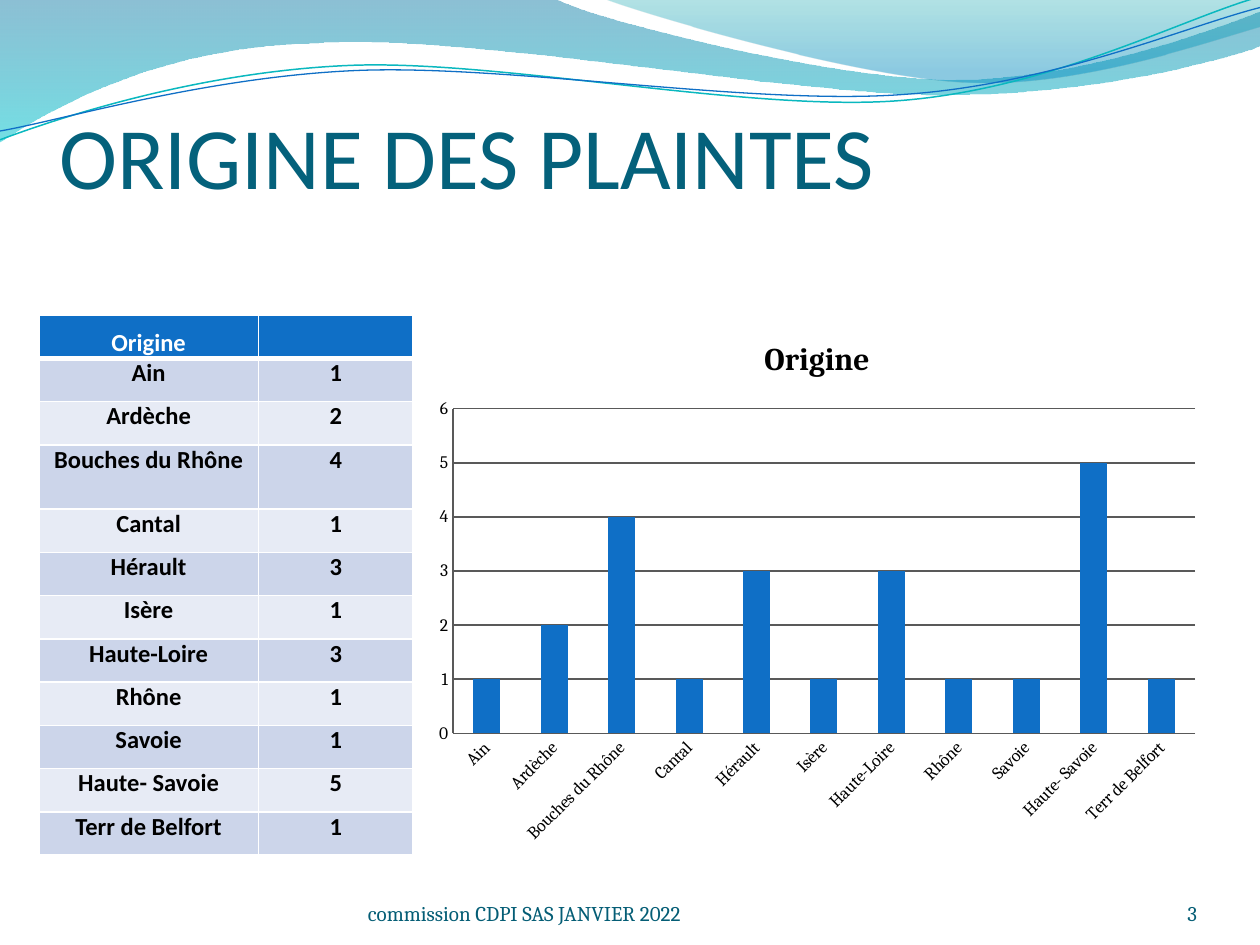
from lxml import etree
from pptx import Presentation
from pptx import util as u
from pptx.chart import data as chart_data
from pptx.dml.color import RGBColor
from pptx.enum import chart as ch, text as tx
from pptx.oxml import parse_xml
from pptx.oxml.ns import nsdecls, qn

# Content
TITLE = "ORIGINE DES PLAINTES"
HEADING = "Origine"
COMPLAINTS = [
    ("Ain", 1), ("Ardèche", 2), ("Bouches du Rhône", 4), ("Cantal", 1),
    ("Hérault", 3), ("Isère", 1), ("Haute-Loire", 3), ("Rhône", 1),
    ("Savoie", 1), ("Haute- Savoie", 5), ("Terr de Belfort", 1),
]
FOOTER, PAGE_NUMBER = "commission CDPI SAS JANVIER 2022", "3"

COLORS = {"title": "04617B", "footer": "045D75", "blue": "0F6FC6", "teal": "0AB8BF",
          "odd": "CCD5EA", "even": "E7EBF5", "white": "FFFFFF", "black": "000000",
          "axis": "595959"}

# Header waves: a two-number step is a line, a six-number step a Bézier curve
BANDS = [
    ([(0, 0), (4.4, -0.01), (4.76, 0.17, 6.64, 0.63, 7.58, 0.63),
      (8.53, 0.63, 9.58, 0.26, 10, 0.09), (10.01, 0.36),
      (9.83, 0.44, 8.7, 0.76, 7.46, 0.75), (6.22, 0.75, 3.82, 0.28, 2.57, 0.34),
      (1.29, 0.36, 0.46, 0.83, -0.01, 1.13), (0, 0)],
     [(0, "0074A1", 45), (100, "00C6CF", 55)]),
    ([(4.79, -0.01), (5.09, 0.11, 6.82, 0.62, 7.69, 0.65),
      (8.56, 0.69, 9.61, 0.32, 10, 0.21), (10, 0), (4.79, -0.01)],
     [(0, "00A1A9", 30), (80, "008BBF", 45)]),
]
STROKES = [
    ([(0, 1.11), (0.48, 0.93, 1.58, 0.57, 2.77, 0.52),
      (3.95, 0.47, 5.93, 0.89, 7.13, 0.8), (8.33, 0.71, 9.38, 0.15, 9.98, -0.02)],
     "teal", 0.85),
    ([(0, 1.04), (0.47, 0.96, 1.64, 0.61, 2.83, 0.56),
      (4.03, 0.51, 5.97, 0.84, 7.17, 0.75), (8.36, 0.67, 9.41, 0.21, 10, 0.06)],
     "blue", 0.75),
]


def rgb(name):
    return RGBColor.from_string(COLORS[name])


def add_wave(page, steps, closed):
    """Build the outline from straight legs, then join each three into a curve."""
    points = [(u.Inches(step[i]), u.Inches(step[i + 1]))
              for step in steps for i in range(0, len(step), 2)]
    builder = page.shapes.build_freeform(*points[0], scale=1.0)
    builder.add_line_segments(points[1:], close=closed)
    wave = builder.convert_to_shape()
    wave.shadow.inherit = False
    legs = iter(list(wave._element.iter(qn("a:lnTo"))))
    for step in steps[1:]:
        first = next(legs)
        if len(step) == 6:
            curve = etree.Element(qn("a:cubicBezTo"))
            first.addprevious(curve)
            for leg in (first, next(legs), next(legs)):
                curve.append(leg[0])
                leg.getparent().remove(leg)
    return wave


def fill_gradient(shape, stops):
    marks = "".join(
        f'<a:gs pos="{pos * 1000}"><a:srgbClr val="{color}">'
        f'<a:alpha val="{alpha * 1000}"/></a:srgbClr></a:gs>' for pos, color, alpha in stops)
    gradient = parse_xml(f'<a:gradFill {nsdecls("a")}><a:gsLst>{marks}</a:gsLst>'
                         '<a:lin ang="5400000" scaled="0"/></a:gradFill>')
    shape._element.spPr.find(qn("a:custGeom")).addnext(gradient)


def add_span(para, text, size, font, color, bold=False, align=None):
    para.alignment = align
    span = para.add_run()
    span.text = text
    span.font.size, span.font.name, span.font.bold = u.Pt(size), font, bold
    span.font.color.rgb = rgb(color)


def write(frame, text, size, font, color, align):
    frame.word_wrap = True
    frame.vertical_anchor = tx.MSO_ANCHOR.BOTTOM
    frame.margin_left = frame.margin_right = frame.margin_top = frame.margin_bottom = 0
    add_span(frame.paragraphs[0], text, size, font, color, align=align)


def set_borders(cell, bottom):
    props = cell._tc.get_or_add_tcPr()
    for index, (side, width) in enumerate(
            (("lnL", 1), ("lnR", 1), ("lnT", 1), ("lnB", bottom))):
        props.insert(index, parse_xml(
            f'<a:{side} {nsdecls("a")} w="{u.Pt(width)}"><a:solidFill>'
            f'<a:srgbClr val="{COLORS["white"]}"/></a:solidFill></a:{side}>'))


def add_origin_table(page):
    rows = [(HEADING, "")] + COMPLAINTS
    height, tall = 4.29, 0.51
    table = page.shapes.add_table(len(rows), 2, u.Inches(0.31), u.Inches(2.5),
                                  u.Inches(2.97), u.Inches(height)).table
    for column, width in zip(table.columns, (1.74, 1.23)):
        column.width = u.Inches(width)
    for r, values in enumerate(rows):
        table.rows[r].height = u.Inches(tall if r == 3 else (height - tall) / (len(rows) - 1))
        for c, value in enumerate(values):
            cell = table.cell(r, c)
            cell.margin_left = cell.margin_right = cell.margin_top = cell.margin_bottom = 0
            cell.vertical_anchor = tx.MSO_ANCHOR.TOP if r else tx.MSO_ANCHOR.BOTTOM
            cell.fill.solid()
            cell.fill.fore_color.rgb = rgb(("even", "odd")[r % 2] if r else "blue")
            set_borders(cell, 1 if r else 3)
            if value:
                add_span(cell.text_frame.paragraphs[0], str(value), 14, "Calibri",
                         "black" if r else "white", True, tx.PP_ALIGN.CENTER)


def add_origin_chart(page):
    data = chart_data.CategoryChartData()
    data.categories = [name for name, _ in COMPLAINTS]
    data.add_series("Series 1", [count for _, count in COMPLAINTS])
    chart = page.shapes.add_chart(ch.XL_CHART_TYPE.COLUMN_CLUSTERED, u.Inches(3.36),
                                  u.Inches(2.5), u.Inches(6.25), u.Inches(4.28), data).chart
    chart.font.size, chart.font.name = u.Pt(10), "Cambria"
    chart.font.color.rgb = rgb("black")
    chart.has_legend = False
    chart.has_title = True
    add_span(chart.chart_title.text_frame.paragraphs[0], HEADING, 18, "Cambria", "black", True)
    chart.chart_title.include_in_layout = False

    plot = chart.plots[0]
    plot.gap_width, plot.vary_by_categories = 150, False
    bars = plot.series[0].format.fill
    bars.solid()
    bars.fore_color.rgb = rgb("blue")

    values, names = chart.value_axis, chart.category_axis
    for line in (values.format.line, names.format.line, values.major_gridlines.format.line):
        line.color.rgb, line.width = rgb("axis"), u.Pt(0.75)
    for axis in (values, names):
        axis.major_tick_mark = ch.XL_TICK_MARK.NONE


def main():
    deck = Presentation()
    deck.slide_width, deck.slide_height = u.Inches(10), u.Inches(7.5)
    page = deck.slides.add_slide(deck.slide_layouts[5])

    # Waves behind everything
    for steps, stops in BANDS:
        band = add_wave(page, steps, True)
        band.line.fill.background()
        fill_gradient(band, stops)
    for steps, color, width in STROKES:
        stroke = add_wave(page, steps, False)
        stroke.fill.background()
        stroke.line.color.rgb, stroke.line.width = rgb(color), u.Pt(width)

    # Title, brought in front of the waves
    title = page.shapes.title
    title.left, title.top, title.width, title.height = map(u.Inches, (0.47, 0.47, 9, 1.17))
    write(title.text_frame, TITLE, 50, "Calibri", "title", tx.PP_ALIGN.LEFT)
    title.text_frame.margin_top = u.Inches(0.05)
    page.shapes._spTree.append(title._element)

    add_origin_table(page)

    # Footer
    for text, left, width, align in ((FOOTER, 2.92, 3.67, tx.PP_ALIGN.LEFT),
                                     (PAGE_NUMBER, 8.67, 0.83, tx.PP_ALIGN.RIGHT)):
        box = page.shapes.add_textbox(*map(u.Inches, (left, 6.95, width, 0.4)))
        write(box.text_frame, text, 12, "Cambria", "footer", align)

    add_origin_chart(page)
    deck.save("out.pptx")


if __name__ == "__main__":
    main()
